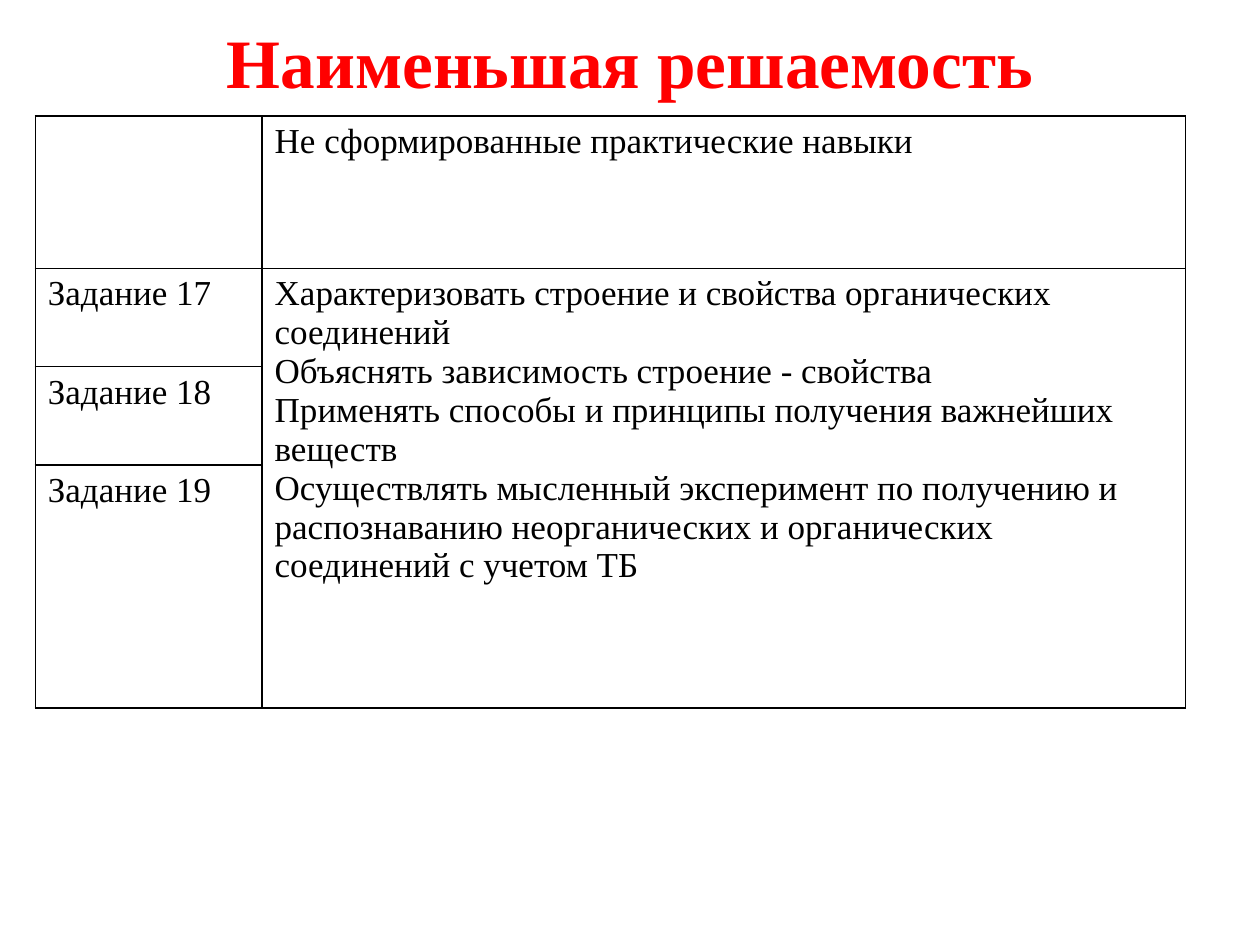
from dataclasses import dataclass

from lxml import etree
from pptx import Presentation
from pptx.dml.color import RGBColor
from pptx.enum import text
from pptx.oxml import ns
from pptx.util import Inches, Pt


@dataclass(frozen=True)
class Theme:
    font: str = "Times New Roman"
    red: str = "FF0000"
    ink: str = "000000"
    head: float = 39.6
    body: float = 20
    rule: float = 1


THEME = Theme()
WIDE, HIGH = 10, 7.5
COLS = [1.8, 7.33]
ROWS = [1.21, 0.78, 0.78, 1.93]
TASKS = ["Задание 17", "Задание 18", "Задание 19"]
GAP = "Не сформированные практические навыки"
SKILLS = [
    "Характеризовать строение и свойства органических соединений",
    "Объяснять зависимость строение - свойства",
    "Применять способы и принципы получения важнейших веществ",
    "Осуществлять мысленный эксперимент по получению и распознаванию "
    "неорганических и органических соединений с учетом ТБ",
]


def write(frame, lines, size=THEME.body, color=THEME.ink, bold=False,
          align=text.PP_ALIGN.LEFT):
    """Fill a text frame, one paragraph for each line."""
    for i, line in enumerate(lines):
        para = frame.paragraphs[0] if i == 0 else frame.add_paragraph()
        para.alignment = align
        run = para.add_run()
        run.text = line
        run.font.name = THEME.font
        run.font.size = Pt(size)
        run.font.bold = bold
        run.font.color.rgb = RGBColor.from_string(color)


def edge(cell):
    """Rule all four sides of a cell and leave it unfilled."""
    props = cell._tc.get_or_add_tcPr()
    for side in ("lnL", "lnR", "lnT", "lnB"):
        line = etree.SubElement(props, ns.qn(f"a:{side}"), w=str(Pt(THEME.rule)))
        fill = etree.SubElement(line, ns.qn("a:solidFill"))
        etree.SubElement(fill, ns.qn("a:srgbClr"), val=THEME.ink)
    cell.fill.background()


def title(slide, box):
    head = slide.shapes.title
    head.left, head.top, head.width, head.height = map(Inches, box)
    frame = head.text_frame
    frame.word_wrap = True
    frame.auto_size = text.MSO_AUTO_SIZE.NONE
    frame.vertical_anchor = text.MSO_ANCHOR.MIDDLE
    write(frame, ["Наименьшая решаемость"], size=THEME.head, color=THEME.red,
          bold=True, align=text.PP_ALIGN.CENTER)


def grid(slide, box):
    left, top, wide, high = box
    table = slide.shapes.add_table(len(ROWS), len(COLS), *map(Inches, box)).table
    table.first_row = table.horz_banding = False

    # Share the box out among columns and rows
    for col, part in zip(table.columns, COLS):
        col.width = Inches(wide * part / sum(COLS))
    for row, part in zip(table.rows, ROWS):
        row.height = Inches(high * part / sum(ROWS))
    for cell in table.iter_cells():
        edge(cell)

    # Tasks on the left share one list of skills
    table.cell(1, 1).merge(table.cell(len(TASKS), 1))
    write(table.cell(0, 1).text_frame, [GAP])
    write(table.cell(1, 1).text_frame, SKILLS)
    for i, task in enumerate(TASKS, 1):
        write(table.cell(i, 0).text_frame, [task])


def main():
    deck = Presentation()
    deck.slide_width, deck.slide_height = Inches(WIDE), Inches(HIGH)
    slide = deck.slides.add_slide(deck.slide_layouts[5])
    title(slide, (0.05 * WIDE, 0.13, 0.9 * WIDE, 0.71))
    grid(slide, (0.28, 0.92, sum(COLS), sum(ROWS)))
    deck.save("out.pptx")


if __name__ == "__main__":
    main()
